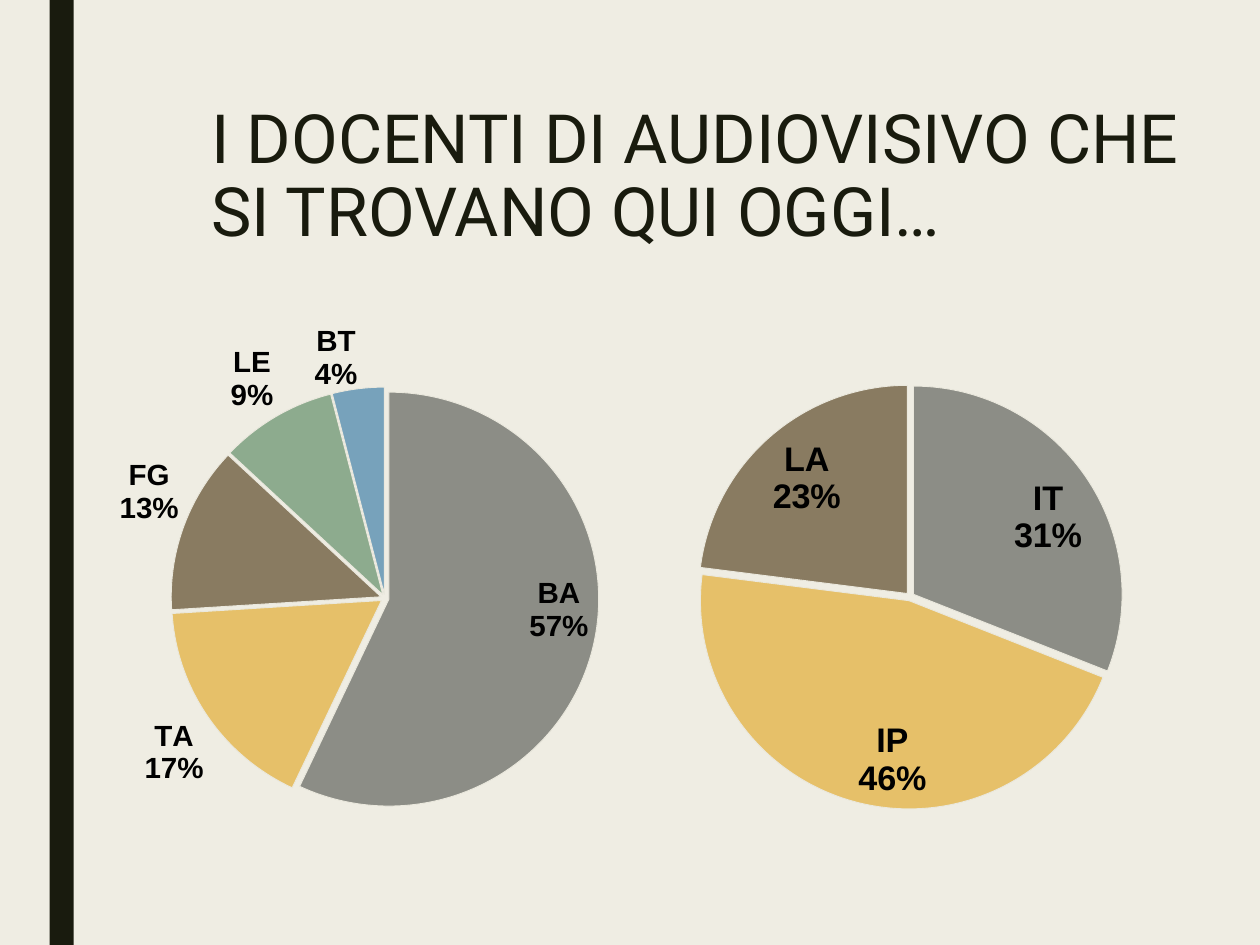
import lxml.etree
import pptx
import pptx.chart.data
import pptx.dml.color
import pptx.enum.chart
import pptx.oxml
import pptx.oxml.ns
import pptx.util

Cm = pptx.util.Cm
Pt = pptx.util.Pt
Position = pptx.enum.chart.XL_LABEL_POSITION
DARK = "191B0E"
SLICE_COLORS = ["8C8D86", "E6C069", "897B61", "8DAB8E", "77A2BB"]


def rgb(color):
    return pptx.dml.color.RGBColor.from_string(color)


def chart_element(tag, value=None):
    """Return a new c: element, with its val attribute if given."""
    element = pptx.oxml.parse_xml(f"<c:{tag} {pptx.oxml.ns.nsdecls('c')}/>")
    if value is not None:
        element.set("val", str(value))
    return element


prs = pptx.Presentation()
prs.slide_width, prs.slide_height = Cm(36.12), Cm(27.1)
slide = prs.slides.add_slide(prs.slide_layouts[6])
slide.background.fill.solid()
slide.background.fill.fore_color.rgb = rgb("EFEDE3")

side_bar = slide.shapes.add_shape(1, Cm(1.42), 0, Cm(0.69), prs.slide_height)
side_bar.shadow.inherit = False
side_bar.fill.solid()
side_bar.fill.fore_color.rgb = rgb(DARK)
side_bar.line.fill.background()

title = slide.shapes.add_textbox(Cm(5.94), Cm(2.9), Cm(28.45), Cm(5.87)).text_frame
title.word_wrap = True
title.margin_left = title.margin_right = Cm(0.13)
title.margin_top = title.margin_bottom = Cm(0.13)
heading = title.paragraphs[0]
heading.line_spacing = 0.89
run = heading.add_run()
run.text = "I DOCENTI DI AUDIOVISIVO CHE SI TROVANO QUI OGGI…"
run.font.name = "Roboto"
run.font.size = Pt(55.2)
run.font.color.rgb = rgb(DARK)

# shares in percent, left, top, side (cm), plot area (x, y, w, h), label size, outer labels
pies = [
    ({"BA": 57, "TA": 17, "FG": 13, "LE": 9, "BT": 4}, 3.02, 9.12, 16.03,
     (0.12, 0.12, 0.76, 0.75), 24, ["TA", "FG", "LE", "BT"]),
    ({"IT": 31, "IP": 46, "LA": 23}, 19.99, 11.02, 12.19,
     (0.01, 0.01, 0.99, 0.99), 28, []),
]

for shares, left, top, side, plot_area, label_size, outer in pies:
    data = pptx.chart.data.CategoryChartData()
    data.categories = list(shares)
    data.add_series("Series 1", list(shares.values()))
    chart = slide.shapes.add_chart(
        pptx.enum.chart.XL_CHART_TYPE.PIE,
        Cm(left), Cm(top), Cm(side), Cm(side), data).chart
    chart.has_title = False
    chart.has_legend = False
    chart.font.name = "Arial"
    chart.font.size = Pt(10)
    chart.font.color.rgb = rgb("000000")
    chart.plots[0].vary_by_categories = True
    series = chart.plots[0].series[0]

    labels = series.data_labels
    labels.number_format = "#,##0%"
    labels.number_format_is_linked = False
    labels.position = Position.INSIDE_END
    label_fonts = [labels.font]
    for i, province in enumerate(shares):
        point = series.points[i]
        point.format.fill.solid()
        point.format.fill.fore_color.rgb = rgb(SLICE_COLORS[i])
        point.format.line.color.rgb = rgb("EAE8DD")
        point.format.line.width = Pt(0.75)
        label = point.data_label
        label_fonts.append(label.font)
        label.position = Position.OUTSIDE_END if province in outer else Position.INSIDE_END
    for font in label_fonts:
        font.name = "Arial"
        font.size = Pt(label_size)
        font.bold = True
        font.color.rgb = rgb("000000")

    root = chart.element
    for slice_format in root.xpath(".//c:dPt/c:spPr"):
        slice_format.addprevious(chart_element("explosion", 2))
    for tag, shown in (("showVal", 0), ("showCatName", 1), ("showPercent", 1)):
        for flag in root.xpath(f".//c:{tag}"):
            flag.set("val", str(shown))
    for last_flag in root.xpath(".//c:showBubbleSize"):
        separator = chart_element("separator")
        separator.text = "\n"
        last_flag.addnext(separator)

    plot = root.xpath(".//c:plotArea")[0]
    for default_layout in plot.xpath("./c:layout"):
        plot.remove(default_layout)
    layout = chart_element("layout")
    manual = chart_element("manualLayout")
    layout.append(manual)
    manual.append(chart_element("layoutTarget", "inner"))
    for tag in ("xMode", "yMode"):
        manual.append(chart_element(tag, "edge"))
    for tag, fraction in zip("xywh", plot_area):
        manual.append(chart_element(tag, fraction))
    plot.insert(0, layout)

prs.save("out.pptx")
